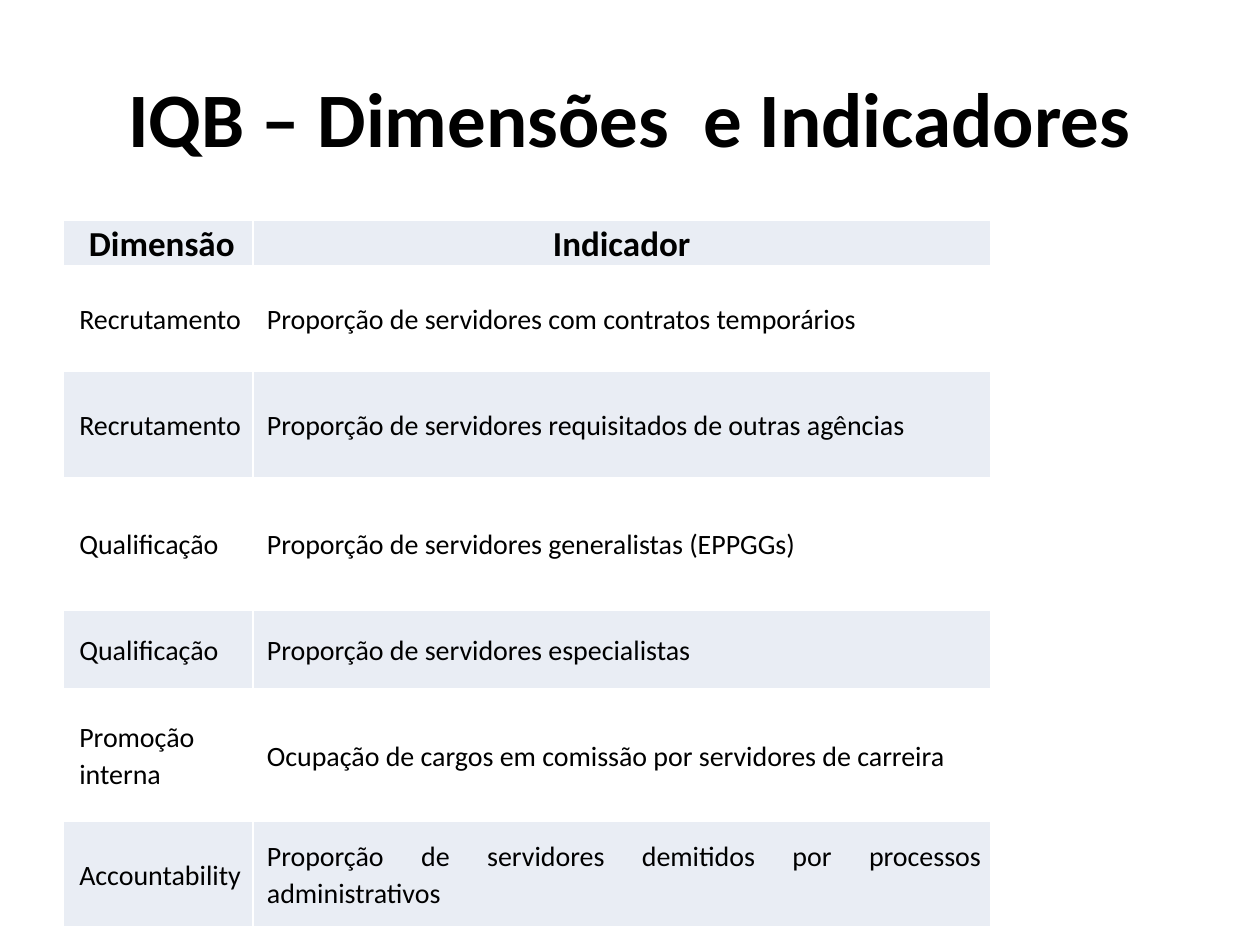
from lxml.etree import SubElement
from pptx import Presentation
from pptx.dml.color import RGBColor
from pptx.enum.text import MSO_ANCHOR, PP_ALIGN
from pptx.oxml.ns import qn
from pptx.util import Inches, Pt

COLORS = {"ink": "000000", "band": "E9EDF4", "line": "FFFFFF"}
FONT = "Calibri"
TITLE = "IQB – Dimensões  e Indicadores"
ROWS = [
    ("Dimensão", "Indicador", 0.36),
    ("Recrutamento", "Proporção de servidores com contratos temporários", 0.84),
    ("Recrutamento", "Proporção de servidores requisitados de outras agências", 0.84),
    ("Qualificação", "Proporção de servidores generalistas (EPPGGs)", 1.05),
    ("Qualificação", "Proporção de servidores especialistas", 0.63),
    ("Promoção interna", "Ocupação de cargos em comissão por servidores de carreira", 1.05),
    ("Accountability", "Proporção de servidores demitidos por processos administrativos", 0.84),
]
SHARES = (0.205, 0.795)
INDENTS = (0.06, 0.04)


def paint(name):
    return RGBColor.from_string(COLORS[name])


def add_run(para, text, size, bold):
    run = para.add_run()
    run.text = text
    font = run.font
    font.name, font.size, font.bold = FONT, Pt(size), bold
    font.color.rgb = paint("ink")


def add_title(slide, left, top, width, height):
    box = slide.shapes.add_textbox(Inches(left), Inches(top), Inches(width), Inches(height))
    frame = box.text_frame
    frame.word_wrap = True
    frame.vertical_anchor = MSO_ANCHOR.MIDDLE
    para = frame.paragraphs[0]
    para.alignment = PP_ALIGN.CENTER
    add_run(para, TITLE, 44, True)


def add_lines(cell):
    props = cell._tc.get_or_add_tcPr()
    for index, side in enumerate(("lnL", "lnR", "lnT", "lnB")):
        line = SubElement(props, qn(f"a:{side}"), w=str(Pt(1)))
        fill = SubElement(line, qn("a:solidFill"))
        SubElement(fill, qn("a:srgbClr"), val=COLORS["line"])
        props.insert(index, line)


def fill_cell(cell, text, head, band, indent):
    cell.vertical_anchor = MSO_ANCHOR.MIDDLE
    cell.margin_left = cell.margin_right = Inches(0.07)
    cell.margin_top = cell.margin_bottom = 0
    if band:
        cell.fill.solid()
        cell.fill.fore_color.rgb = paint("band")
    else:
        cell.fill.background()
    add_lines(cell)
    para = cell.text_frame.paragraphs[0]
    para.alignment = PP_ALIGN.CENTER if head else PP_ALIGN.JUSTIFY
    para.line_spacing = 1.07
    para.space_after = Pt(8)
    para._p.get_or_add_pPr().set("marL", str(Inches(indent)))
    add_run(para, text, 20 if head else 16, head)


def add_grid(slide, left, top, width):
    height = sum(row[-1] for row in ROWS)
    frame = slide.shapes.add_table(
        len(ROWS), len(SHARES), Inches(left), Inches(top), Inches(width), Inches(height)
    )
    table = frame.table
    for col, share in zip(table.columns, SHARES):
        col.width = Inches(width * share)
    for r, (*texts, tall) in enumerate(ROWS):
        table.rows[r].height = Inches(tall)
        for c, text in enumerate(texts):
            indent = 0 if r == 0 and c == 1 else INDENTS[c]
            fill_cell(table.cell(r, c), text, r == 0, r % 2 == 0, indent)


def main():
    deck = Presentation()
    deck.slide_width, deck.slide_height = Inches(10), Inches(7.5)
    slide = deck.slides.add_slide(deck.slide_layouts[6])
    add_title(slide, 0.5, 0.3, 9, 1.25)
    add_grid(slide, 0.5, 1.75, 7.36)
    deck.save("out.pptx")


if __name__ == "__main__":
    main()
